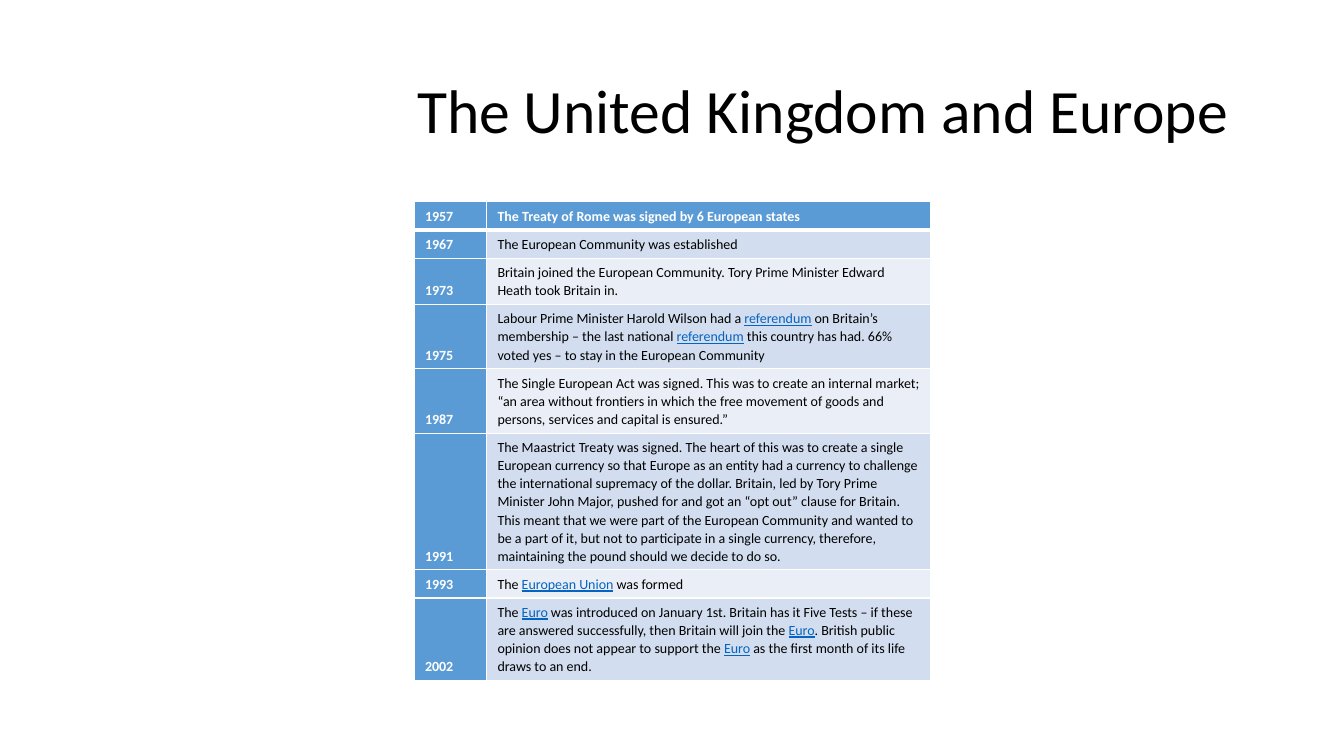
from dataclasses import dataclass

from lxml.etree import SubElement
from pptx import Presentation
from pptx.dml.color import RGBColor
from pptx.enum.text import MSO_ANCHOR as Anchor, PP_ALIGN as Align
from pptx.oxml.ns import qn
from pptx.slide import Slide
from pptx.table import _Cell as Cell
from pptx.text.text import _Paragraph as Paragraph
from pptx.util import Pt

FONT = "Calibri"
BLACK = RGBColor(0x00, 0x00, 0x00)
WHITE = RGBColor(0xFF, 0xFF, 0xFF)
BLUE = RGBColor(0x5B, 0x9B, 0xD5)
DARK_BAND = RGBColor(0xD2, 0xDE, 0xEF)
LIGHT_BAND = RGBColor(0xEA, 0xEF, 0xF7)
TERM_BLUE = RGBColor(0x05, 0x63, 0xC1)

LINE_HEIGHT = 12.9
ROW_PADDING = 7.3
CELL_FORMAT = {
    "vertical_anchor": Anchor.BOTTOM,
    "margin_left": Pt(7.6),
    "margin_right": Pt(7.6),
    "margin_top": Pt(3.6),
    "margin_bottom": Pt(3.6),
}


@dataclass
class Event:
    year: str
    account: str  # terms between bars are underlined
    lines: int = 1


EVENTS = [
    Event("1957", "The Treaty of Rome was signed by 6 European states"),
    Event("1967", "The European Community was established"),
    Event("1973", "Britain joined the European Community. Tory Prime Minister "
          "Edward Heath took Britain in.", 2),
    Event("1975", "Labour Prime Minister Harold Wilson had a |referendum| on "
          "Britain’s membership – the last national |referendum| this country "
          "has had. 66% voted yes – to stay in the European Community", 3),
    Event("1987", "The Single European Act was signed. This was to create an "
          "internal market; “an area without frontiers in which the free "
          "movement of goods and persons, services and capital is ensured.”", 3),
    Event("1991", "The Maastrict Treaty was signed. The heart of this was to "
          "create a single European currency so that Europe as an entity had a "
          "currency to challenge the international supremacy of the dollar. "
          "Britain, led by Tory Prime Minister John Major, pushed for and got "
          "an “opt out” clause for Britain. This meant that we were part of "
          "the European Community and wanted to be a part of it, but not to "
          "participate in a single currency, therefore, maintaining the pound "
          "should we decide to do so.", 7),
    Event("1993", "The |European Union| was formed"),
    Event("2002", "The |Euro| was introduced on January 1st. Britain has it "
          "Five Tests – if these are answered successfully, then Britain will "
          "join the |Euro|. British public opinion does not appear to support "
          "the |Euro| as the first month of its life draws to an end.", 4),
]


def add_text(paragraph: Paragraph, text: str, size: float, color: RGBColor,
             bold: bool = False) -> None:
    """Write text, underlining the terms between bars."""
    for index, part in enumerate(text.split("|")):
        is_term = index % 2 == 1
        run = paragraph.add_run()
        run.text = part
        run.font.color.rgb = TERM_BLUE if is_term else color
        font_format = {"name": FONT, "size": Pt(size), "bold": bold,
                       "underline": is_term}
        for name, value in font_format.items():
            setattr(run.font, name, value)


def add_borders(cell: Cell, top: float, bottom: float) -> None:
    properties = cell._tc.get_or_add_tcPr()
    for side, width in {"L": 1, "R": 1, "T": top, "B": bottom}.items():
        border = SubElement(properties, qn(f"a:ln{side}"), w=str(Pt(width)))
        fill = SubElement(border, qn("a:solidFill"))
        SubElement(fill, qn("a:srgbClr"), val=str(WHITE))


def fill_cell(cell: Cell, text: str, row: int, is_heading: bool) -> None:
    for name, value in CELL_FORMAT.items():
        setattr(cell, name, value)
    # The heavy rule lies between the first two rows
    add_borders(cell, top=3 if row == 1 else 1, bottom=3 if row == 0 else 1)
    band = DARK_BAND if row % 2 else LIGHT_BAND
    cell.fill.solid()
    cell.fill.fore_color.rgb = BLUE if is_heading else band
    paragraph = cell.text_frame.paragraphs[0]
    paragraph.line_spacing = 1.07
    add_text(paragraph, text, 10, WHITE if is_heading else BLACK, is_heading)


def add_title(slide: Slide, text: str) -> None:
    title = slide.shapes.add_textbox(Pt(66), Pt(28.8), Pt(1044), Pt(104.4))
    title.text_frame.word_wrap = True
    title.text_frame.vertical_anchor = Anchor.MIDDLE
    heading = title.text_frame.paragraphs[0]
    heading.alignment = Align.CENTER
    heading.line_spacing = 0.9
    add_text(heading, text, 44, BLACK)


def add_timeline(slide: Slide, events: list[Event]) -> None:
    widths = (51.8, 316.8)
    heights = [ROW_PADDING + LINE_HEIGHT * event.lines for event in events]
    timeline = slide.shapes.add_table(
        len(events), len(widths), Pt(296), Pt(144),
        Pt(sum(widths)), Pt(sum(heights))).table
    timeline.first_col = True
    for column, width in zip(timeline.columns, widths):
        column.width = Pt(width)
    for row, (event, height) in enumerate(zip(events, heights)):
        timeline.rows[row].height = Pt(height)
        fill_cell(timeline.cell(row, 0), event.year, row, True)
        fill_cell(timeline.cell(row, 1), event.account, row, row == 0)


def main() -> None:
    deck = Presentation()
    deck.slide_width, deck.slide_height = Pt(960), Pt(540)
    slide = deck.slides.add_slide(deck.slide_layouts[6])
    add_title(slide, "The United Kingdom and Europe")
    add_timeline(slide, EVENTS)
    deck.save("out.pptx")


if __name__ == "__main__":
    main()
